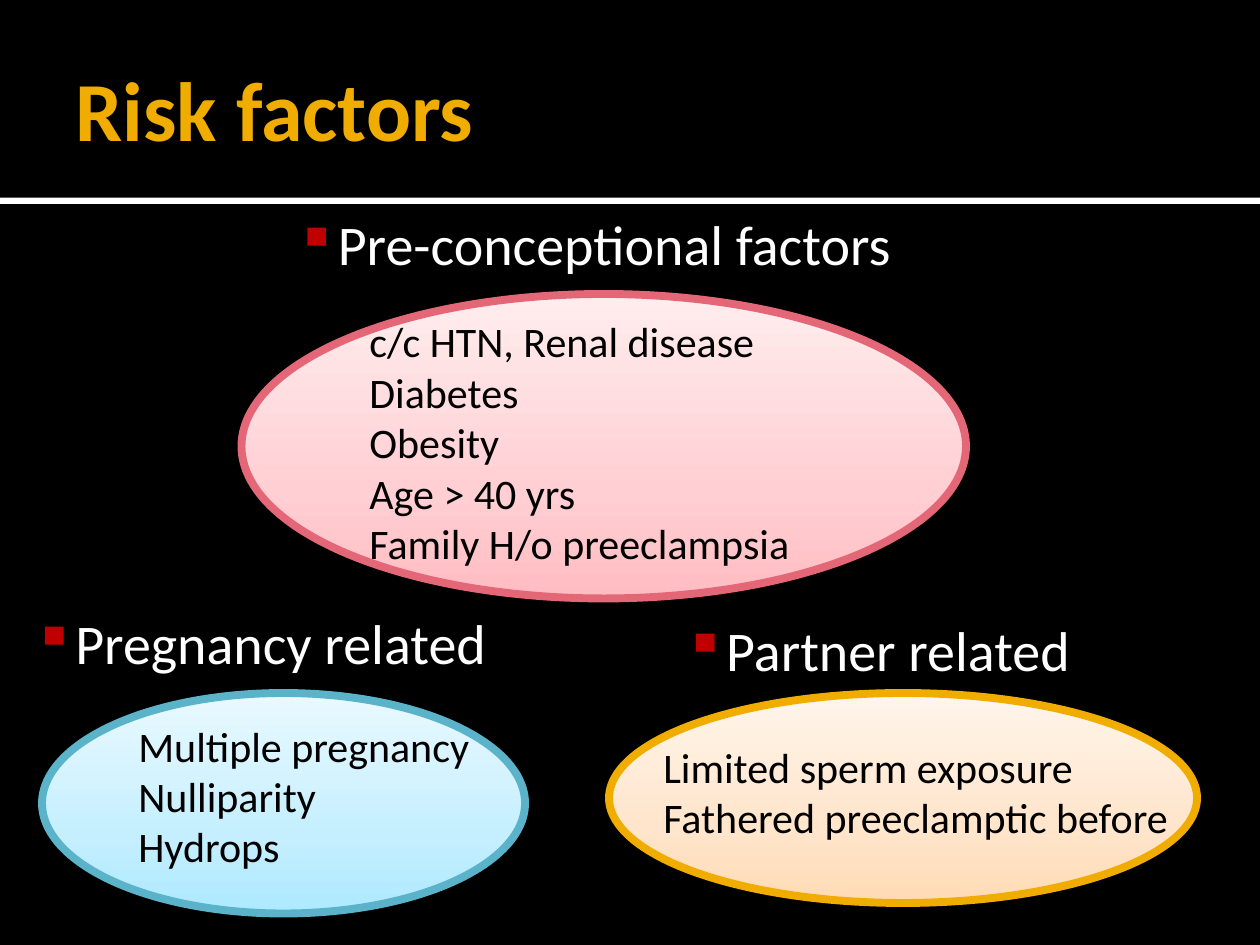
"""Build the risk factors slide: three headed ellipses under a title."""

from copy import deepcopy
from dataclasses import dataclass

from lxml.etree import SubElement
from pptx import Presentation
from pptx.dml.color import RGBColor
from pptx.enum.shapes import MSO_SHAPE
from pptx.enum.text import MSO_ANCHOR, PP_ALIGN
from pptx.oxml.ns import qn
from pptx.shapes.autoshape import Shape
from pptx.slide import Slide
from pptx.text.text import _Paragraph
from pptx.util import Pt

BLACK = RGBColor(0x00, 0x00, 0x00)
WHITE = RGBColor(0xFF, 0xFF, 0xFF)
GOLD = RGBColor(0xF0, 0xAD, 0x00)
ROSE = RGBColor(0xE4, 0x67, 0x78)
TEAL = RGBColor(0x5B, 0xB3, 0xCA)
BULLET_RED = RGBColor(0xC0, 0x00, 0x00)
ROSE_TINTS = (RGBColor(0xFF, 0xBC, 0xC2), RGBColor(0xFF, 0xCF, 0xD3), RGBColor(0xFF, 0xED, 0xEE))
TEAL_TINTS = (RGBColor(0xAD, 0xE9, 0xFF), RGBColor(0xC5, 0xEF, 0xFF), RGBColor(0xE9, 0xF9, 0xFF))
GOLD_TINTS = (RGBColor(0xFF, 0xDB, 0xB5), RGBColor(0xFF, 0xE5, 0xCB), RGBColor(0xFF, 0xF5, 0xEB))
STOP_POSITIONS = (0, 0.35, 1)
FONT = "Calibri"
BULLET_INDENT = Pt(16)


@dataclass(frozen=True)
class Area:
    left: float
    top: float
    width: float
    height: float

    def lengths(self) -> tuple[Pt, Pt, Pt, Pt]:
        return Pt(self.left), Pt(self.top), Pt(self.width), Pt(self.height)


@dataclass(frozen=True)
class FactorGroup:
    heading: str
    heading_area: Area
    factors: tuple[str, ...]
    factors_area: Area
    ellipse_area: Area
    outline: RGBColor
    tints: tuple[RGBColor, ...]


GROUPS = (
    FactorGroup(
        "Pre-conceptional factors", Area(162, 116, 356, 46),
        ("c/c HTN, Renal disease", "Diabetes", "Obesity", "Age > 40 yrs", "Family H/o preeclampsia"),
        Area(204, 177, 270, 153), Area(138, 168, 414, 174), ROSE, ROSE_TINTS,
    ),
    FactorGroup(
        "Pregnancy related", Area(12, 344, 276, 46),
        ("Multiple pregnancy Nulliparity", "Hydrops"),
        Area(72, 408, 246, 94), Area(24, 396, 276, 126), TEAL, TEAL_TINTS,
    ),
    FactorGroup(
        "Partner related", Area(384, 348, 235, 46),
        ("Limited sperm exposure", "Fathered preeclamptic before"),
        Area(372, 420, 318, 66), Area(348, 396, 336, 120), GOLD, GOLD_TINTS,
    ),
)


def add_span(para: _Paragraph, text: str, size: float, color: RGBColor, bold: bool = False) -> None:
    span = para.add_run()
    span.text = text
    span.font.name = FONT
    span.font.size = Pt(size)
    span.font.bold = bold
    span.font.color.rgb = color


def add_bullet(para: _Paragraph) -> None:
    properties = para._p.get_or_add_pPr()
    properties.set("marL", str(BULLET_INDENT))
    properties.set("indent", str(-BULLET_INDENT))
    color = SubElement(properties, qn("a:buClr"))
    SubElement(color, qn("a:srgbClr"), val=str(BULLET_RED))
    SubElement(properties, qn("a:buChar"), char="▪")


def add_text(slide: Slide, area: Area, lines: tuple[str, ...], size: float,
             color: RGBColor, bulleted: bool = False) -> None:
    frame = slide.shapes.add_textbox(*area.lengths()).text_frame
    frame.word_wrap = True
    for index, line in enumerate(lines):
        para = frame.add_paragraph() if index else frame.paragraphs[0]
        if bulleted:
            add_bullet(para)
        add_span(para, line, size, color)


def fill_gradient(shape: Shape, tints: tuple[RGBColor, ...]) -> None:
    shape.fill.gradient()
    shape.fill.gradient_angle = 90
    stop_list = shape._element.spPr.find(qn("a:gradFill")).find(qn("a:gsLst"))
    stop_list.insert(1, deepcopy(stop_list[0]))
    for stop, position, tint in zip(shape.fill.gradient_stops, STOP_POSITIONS, tints):
        stop.position = position
        stop.color.rgb = tint


def add_group(slide: Slide, group: FactorGroup) -> None:
    ellipse = slide.shapes.add_shape(MSO_SHAPE.OVAL, *group.ellipse_area.lengths())
    ellipse.shadow.inherit = False
    fill_gradient(ellipse, group.tints)
    ellipse.line.color.rgb = group.outline
    ellipse.line.width = Pt(4.5)
    add_text(slide, group.factors_area, group.factors, 24, BLACK)
    add_text(slide, group.heading_area, (group.heading,), 32, WHITE, bulleted=True)


def add_title(slide: Slide) -> None:
    title = slide.shapes.title
    title.left, title.top, title.width, title.height = Area(36, 12, 648, 99).lengths()
    frame = title.text_frame
    frame.vertical_anchor = MSO_ANCHOR.MIDDLE
    frame.margin_left = Pt(7.2)
    frame.margin_top = frame.margin_right = frame.margin_bottom = Pt(3.6)
    para = frame.paragraphs[0]
    para.alignment = PP_ALIGN.LEFT
    add_span(para, "Risk factors", 48, GOLD, bold=True)


def add_divider(slide: Slide) -> None:
    divider = slide.shapes.add_shape(MSO_SHAPE.RECTANGLE, *Area(0, 113, 720, 3.6).lengths())
    divider.shadow.inherit = False
    divider.fill.solid()
    divider.fill.fore_color.rgb = WHITE
    divider.line.fill.background()


def main() -> None:
    deck = Presentation()
    deck.slide_width, deck.slide_height = Pt(720), Pt(540)
    page = deck.slides.add_slide(deck.slide_layouts[5])
    page.background.fill.solid()
    page.background.fill.fore_color.rgb = BLACK
    add_divider(page)
    add_title(page)
    for group in GROUPS:
        add_group(page, group)
    deck.save("out.pptx")


if __name__ == "__main__":
    main()
